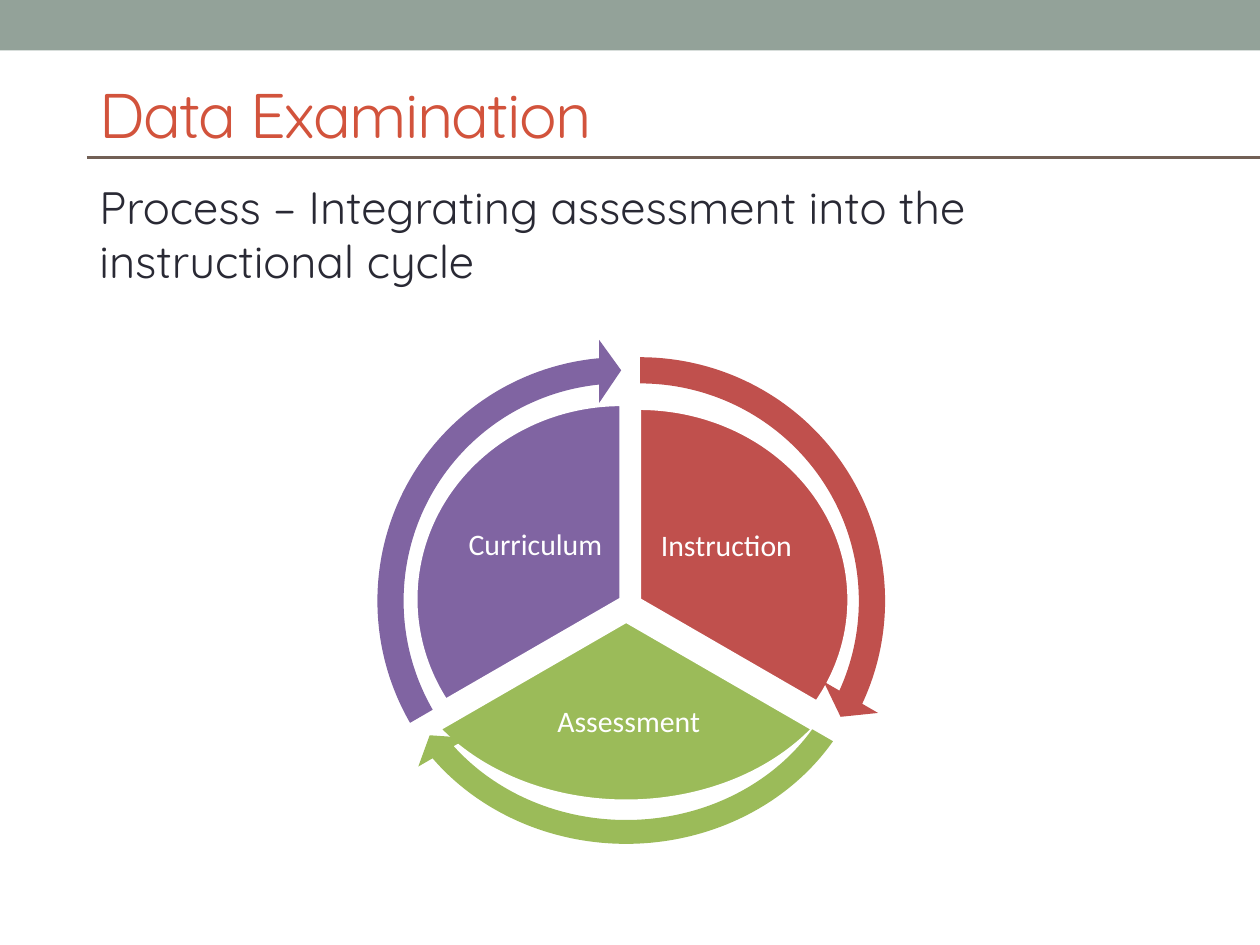
from pptx import Presentation
from pptx import util as u
from pptx.dml.color import RGBColor
from pptx.enum import shapes, text
from pptx.util import Inches
from lxml import etree

SAGE = RGBColor(0x93, 0xA2, 0x99)
BROWN = RGBColor(0x72, 0x60, 0x56)
ORANGE = RGBColor(0xD2, 0x53, 0x3C)
INK = RGBColor(0x29, 0x29, 0x34)
WHITE = RGBColor(0xFF, 0xFF, 0xFF)
RED = RGBColor(0xC0, 0x50, 0x4D)
GREEN = RGBColor(0x9B, 0xBB, 0x59)
PURPLE = RGBColor(0x80, 0x64, 0xA2)


def write(sp, words, size, color, font="Quicksand", align=text.PP_ALIGN.LEFT,
          anchor=text.MSO_ANCHOR.TOP, inset=None, before=0, spacing=1.0, track=None):
    tf = sp.text_frame
    tf.word_wrap = True
    tf.auto_size = text.MSO_AUTO_SIZE.NONE
    tf.vertical_anchor = anchor
    if inset is not None:
        tf.margin_left = tf.margin_right = tf.margin_top = tf.margin_bottom = Inches(inset)
    p = tf.paragraphs[0]
    p.alignment = align
    p.space_before = u.Pt(before)
    p.line_spacing = spacing
    r = p.add_run()
    r.text = words
    r.font.size = u.Pt(size)
    r.font.name = font
    r.font.color.rgb = color
    if track is not None:
        r._r.get_or_add_rPr().set("spc", str(track * 100))


def draw(s, kind, box, fill, adjustments=(), line=None):
    sp = s.shapes.add_shape(kind, *map(Inches, box))
    sp.shadow.inherit = False
    for i, value in enumerate(adjustments):
        sp.adjustments[i] = value
    sp.fill.solid()
    sp.fill.fore_color.rgb = fill
    if line is None:
        sp.line.fill.background()
    else:
        sp.line.color.rgb = line
        sp.line.width = u.Pt(2)


prs = Presentation()
prs.slide_width, prs.slide_height = Inches(10), Inches(7.5)
s = prs.slides.add_slide(prs.slide_layouts[5])

draw(s, shapes.MSO_SHAPE.RECTANGLE, (0, 0, 10, 0.4), SAGE)

rule = s.shapes.add_connector(shapes.MSO_CONNECTOR.STRAIGHT,
                              Inches(0.69), Inches(1.25), Inches(10), Inches(1.25))
rule.line.color.rgb = BROWN
rule.line.width = u.Pt(2.08)
etree.SubElement(rule._element.spPr,
                 "{http://schemas.openxmlformats.org/drawingml/2006/main}effectLst")

title = s.shapes.title
title.left, title.top, title.width, title.height = map(Inches, (0.69, 0.63, 8.81, 0.62))
write(title, "Data Examination", 36, ORANGE, anchor=text.MSO_ANCHOR.BOTTOM, track=-1)

body = s.shapes.add_textbox(*map(Inches, (0.69, 1.37, 8.81, 0.81)))
write(body, "Process – Integrating assessment into the instructional cycle", 25.9, INK, before=5)

stages = [
    ("Instruction", RED, (3.41, 3.24, 3.33, 3.04), (162, 18), (5.17, 3.89, 1.19, 0.9),
     (2.99, 2.69, 4.18, 4.16), (14.73, 161.99)),
    ("Assessment", GREEN, (3.12, 3.5, 3.7, 2.86), (18, 90), (4, 5.36, 1.98, 0.75),
     (2.89, 3.04, 4.16, 3.79), (86.72, 18)),
    ("Curriculum", PURPLE, (3.3, 3.21, 3.26, 3.09), (90, 162), (3.67, 3.87, 1.16, 0.92),
     (2.85, 2.69, 4.16, 4.16), (158.73, 90)),
]

for name, color, pie, angles, label, _, _ in stages:
    draw(s, shapes.MSO_SHAPE.PIE, pie, color, angles, WHITE)
    tb = s.shapes.add_textbox(*map(Inches, label))
    write(tb, name, 17, WHITE, font="Calibri", align=text.PP_ALIGN.CENTER,
          anchor=text.MSO_ANCHOR.MIDDLE, inset=0.02, spacing=0.9)

for _, color, _, _, _, arrow, (end, start) in stages:
    draw(s, shapes.MSO_SHAPE.CIRCULAR_ARROW, arrow, color, (0.05, 3.28, end, start, 0.06))

prs.save("out.pptx")
